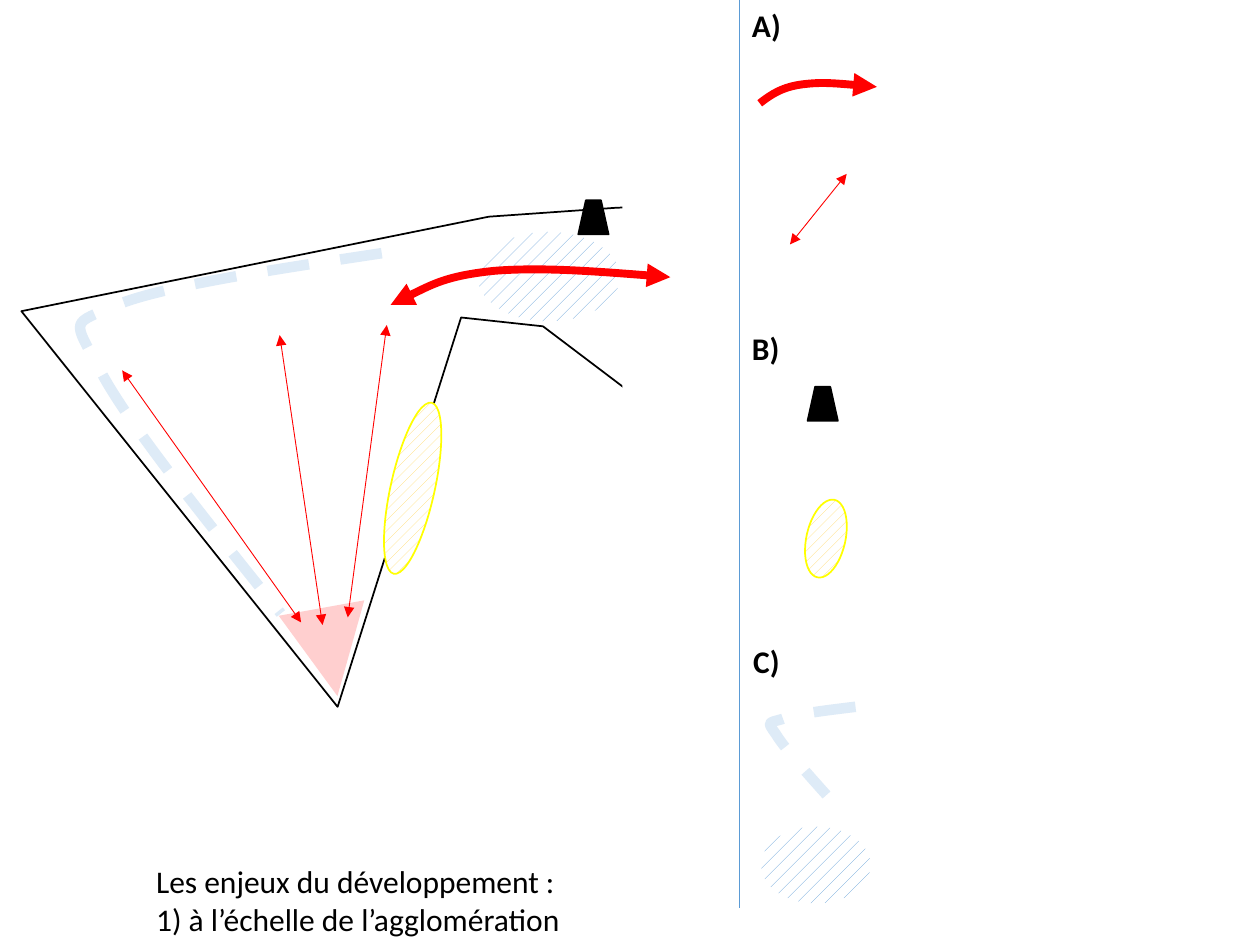
from dataclasses import dataclass

from lxml.etree import SubElement
from pptx import Presentation
from pptx.dml.color import RGBColor
from pptx.enum.dml import MSO_LINE, MSO_PATTERN
from pptx.enum.shapes import MSO_CONNECTOR, MSO_SHAPE
from pptx.enum.text import MSO_AUTO_SIZE
from pptx.oxml.ns import qn
from pptx.util import Inches, Pt


@dataclass(frozen=True)
class Theme:
    """Colours, type and line widths of the slide."""
    black: str = "000000"
    white: str = "FFFFFF"
    red: str = "FF0000"
    blue: str = "5B9BD5"
    pale_blue: str = "DEEBF7"
    yellow: str = "FFFF00"
    gold: str = "FFD966"
    font: str = "Calibri"
    text_size: float = 18
    thin: float = 0.5
    outline: float = 1
    flow: float = 4.5
    dash: float = 6


@dataclass(frozen=True)
class Box:
    """A region in inches, against which its parts are placed."""
    left: float
    top: float
    width: float
    height: float

    def point(self, x, y):
        """Return a point of the region in slide lengths."""
        return Inches(self.left + x), Inches(self.top + y)


THEME = Theme()


def color(value):
    """Turn a hexadecimal value into a colour."""
    return RGBColor.from_string(value)


def style_line(shape, line_color, width, head=False, tail=False):
    """Set the line colour, width and arrowheads."""
    shape.line.color.rgb = color(line_color)
    shape.line.width = Pt(width)
    line = shape._element.spPr.find(qn("a:ln"))
    for tag, wanted in (("a:headEnd", head), ("a:tailEnd", tail)):
        if wanted:
            SubElement(line, qn(tag)).set("type", "triangle")


def add_preset(shapes, box, preset, bounds, fill=None, line=None, rotation=0):
    """Add a preset shape with an optional plain fill and outline."""
    left, top, width, height = bounds
    shape = shapes.add_shape(preset, *box.point(left, top), Inches(width), Inches(height))
    shape.shadow.inherit = False
    shape.rotation = rotation
    if fill:
        shape.fill.solid()
        shape.fill.fore_color.rgb = color(fill)
    if line:
        style_line(shape, line, THEME.outline)
    else:
        shape.line.fill.background()
    return shape


def add_patterned_ellipse(slide, box, bounds, pattern, foreground, line=None, rotation=0):
    """Add an ellipse filled with a pattern on white."""
    ellipse = add_preset(slide.shapes, box, MSO_SHAPE.OVAL, bounds, None, line, rotation)
    ellipse.fill.patterned()
    ellipse.fill.pattern = pattern
    ellipse.fill.fore_color.rgb = color(foreground)
    ellipse.fill.back_color.rgb = color(THEME.white)


def add_project_zone(slide, box, bounds):
    """Add a blue hatched zone."""
    add_patterned_ellipse(slide, box, bounds, MSO_PATTERN.PERCENT_10, THEME.blue)


def add_riverside_zone(slide, box, bounds):
    """Add a tilted yellow hatched zone."""
    add_patterned_ellipse(slide, box, bounds, MSO_PATTERN.DASHED_UPWARD_DIAGONAL,
                          THEME.gold, THEME.yellow, 12.5)


def add_landmark(slide, box, left, top):
    """Add a black trapezoid."""
    add_preset(slide.shapes, box, MSO_SHAPE.TRAPEZOID, (left, top, 0.24, 0.27),
               THEME.black, THEME.black)


def add_outline(shapes, box, points, closed=False):
    """Add an unfilled freeform through the points."""
    start, *others = [box.point(x, y) for x, y in points]
    builder = shapes.build_freeform(*start)
    builder.add_line_segments(others, close=closed)
    shape = builder.convert_to_shape()
    shape.shadow.inherit = False
    shape.fill.background()
    return shape


def add_curve(slide, box, points):
    """Add a Bézier curve from a start and triples of control points."""
    shape = add_outline(slide.shapes, box, points)
    path = shape._element.spPr.find(".//" + qn("a:path"))
    segments = path.findall(qn("a:lnTo"))
    for first in range(0, len(segments), 3):
        cubic = SubElement(path, qn("a:cubicBezTo"))
        for segment in segments[first:first + 3]:
            cubic.append(segment[0])
            path.remove(segment)
    return shape


def add_flow(slide, box, points, head=False):
    """Add a thick red curved arrow."""
    style_line(add_curve(slide, box, points), THEME.red, THEME.flow, head, True)


def add_belt(slide, box, points):
    """Add a pale dashed curve."""
    belt = add_curve(slide, box, points)
    belt.line.dash_style = MSO_LINE.DASH
    style_line(belt, THEME.pale_blue, THEME.dash)


def add_line(slide, box, start, end, line_color, arrows=False):
    """Add a thin straight line, with arrowheads at both ends if wanted."""
    line = slide.shapes.add_connector(MSO_CONNECTOR.STRAIGHT, *box.point(*start), *box.point(*end))
    style_line(line, line_color, THEME.thin, arrows, arrows)
    SubElement(line._element.spPr, qn("a:effectLst"))


def add_text(slide, box, text, bold=False, wrap=True):
    """Fill the box with one paragraph of text."""
    shape = slide.shapes.add_textbox(*box.point(0, 0), Inches(box.width), Inches(box.height))
    frame = shape.text_frame
    frame.text = text
    frame.word_wrap = wrap
    frame.auto_size = MSO_AUTO_SIZE.SHAPE_TO_FIT_TEXT
    font = frame.paragraphs[0].runs[0].font
    font.name, font.size, font.bold = THEME.font, Pt(THEME.text_size), bold
    font.color.rgb = color(THEME.black)


def draw_map(slide, box):
    """Draw the schematic map of the urban area."""
    add_project_zone(slide, box, (3.62, 0.33, 1.13, 0.71))
    territory = slide.shapes.add_group_shape().shapes
    border = add_outline(territory, box, [
        (2.51, 4.1), (0, 0.96), (3.71, 0.21), (4.71, 0.14),
        (4.93, 0.13), (4.88, 1.64), (4.14, 1.08), (3.49, 1.01)], closed=True)
    style_line(border, THEME.black, THEME.outline)
    add_preset(territory, box, MSO_SHAPE.RECTANGLE, (4.77, 0, 0.29, 1.72), THEME.white)
    center = add_preset(slide.shapes, box, MSO_SHAPE.ISOSCELES_TRIANGLE,
                        (2.1, 3.31, 0.69, 0.71), THEME.red, rotation=169.8)
    fill_color = center._element.spPr.find(qn("a:solidFill"))[0]
    SubElement(fill_color, qn("a:alpha")).set("val", "19000")
    add_flow(slide, box, [(2.93, 0.91), (3.15, 0.8), (3.37, 0.68), (3.75, 0.64),
                          (4.12, 0.61), (4.64, 0.65), (5.15, 0.69)], head=True)
    for start, end in (((0.8, 1.43), (2.22, 3.43)),
                       ((2.9, 1.07), (2.59, 3.39)),
                       ((2.05, 1.15), (2.39, 3.45))):
        add_line(slide, box, start, end, THEME.red, arrows=True)
    add_riverside_zone(slide, box, (2.93, 1.67, 0.35, 1.39))
    add_landmark(slide, box, 4.42, 0.08)
    add_belt(slide, box, [(2.86, 0.5), (2, 0.63), (1.13, 0.76), (0.76, 0.91), (0.39, 1.07),
                          (0.4, 1.01), (0.62, 1.42), (0.83, 1.83), (1.45, 2.6), (2.06, 3.36)])


def draw_legend(slide, box):
    """Draw the divider and the three lettered legend sections."""
    add_line(slide, box, (0, 0), (0, box.height), THEME.blue)
    for letter, left, top in (("A)", 0, 0), ("B)", 0, 2.56), ("C)", 0.01, 5.05)):
        label = Box(box.left + left, box.top + top, 0.43, 0.4)
        add_text(slide, label, letter, bold=True, wrap=False)
    add_flow(slide, box, [(0.16, 0.82), (0.25, 0.75), (0.34, 0.69), (0.5, 0.67),
                          (0.65, 0.65), (0.87, 0.67), (1.09, 0.69)])
    add_line(slide, box, (0.85, 1.38), (0.4, 1.94), THEME.red, arrows=True)
    add_landmark(slide, box, 0.54, 3.07)
    add_riverside_zone(slide, box, (0.53, 3.96, 0.31, 0.63))
    add_project_zone(slide, box, (0.17, 6.56, 0.87, 0.61))
    add_belt(slide, box, [(0.92, 5.61), (0.67, 5.64), (0.43, 5.67), (0.33, 5.71), (0.22, 5.74),
                          (0.22, 5.73), (0.29, 5.83), (0.35, 5.93), (0.52, 6.12), (0.69, 6.31)])


def main():
    """Build and save the slide."""
    presentation = Presentation()
    presentation.slide_width, presentation.slide_height = Inches(10), Inches(7.5)
    slide = presentation.slides.add_slide(presentation.slide_layouts[6])
    draw_map(slide, Box(0.17, 1.51, 5.15, 4.1))
    draw_legend(slide, Box(5.87, 0, 4.13, 7.21))
    add_text(slide, Box(1.14, 6.79, 3.52, 0.71),
             "Les enjeux du développement : 1) à l’échelle de l’agglomération")
    presentation.save("out.pptx")


if __name__ == "__main__":
    main()
